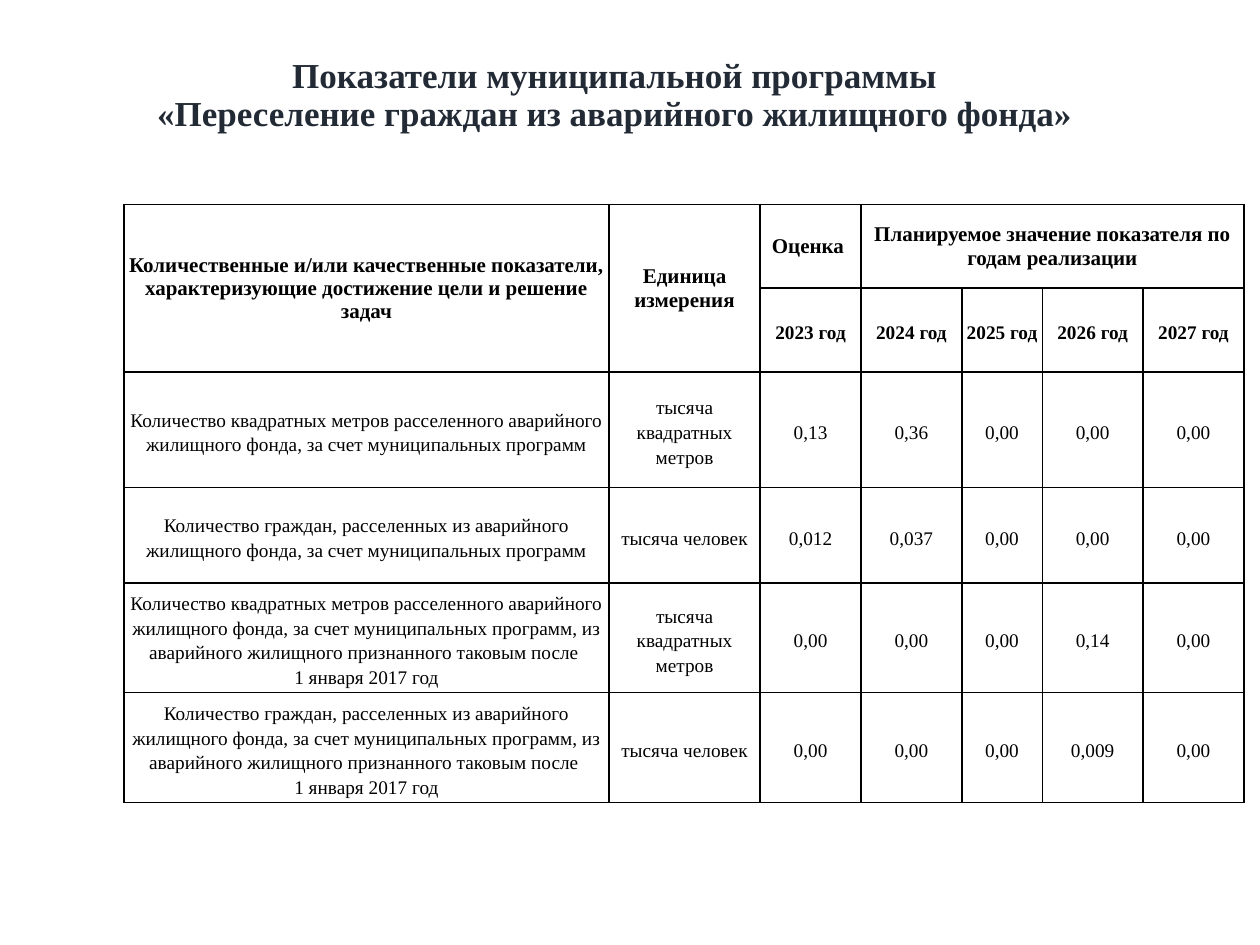
import pptx
import pptx.util
import pptx.dml.color
import pptx.enum.text
import pptx.oxml
import pptx.oxml.ns
from lxml import etree

Pt = pptx.util.Pt
COLORS = {"title": "222A35", "text": "000000", "border": "000000", "cell": "FFFFFF"}
FONT = "Times New Roman"

COLUMN_WIDTHS = [277.2, 86.4, 57.6, 57.6, 46, 57.6, 57.6]
ROW_HEIGHTS = [47.7, 48, 66.2, 54.5, 61, 61]
YEARS = [f"{year} год" for year in range(2023, 2028)]
AREA = "Количество квадратных метров расселенного аварийного жилищного фонда, за счет муниципальных программ"
PEOPLE = "Количество граждан, расселенных из аварийного жилищного фонда, за счет муниципальных программ"
AFTER_2017 = ", из аварийного жилищного признанного таковым после \n1 января 2017 год"
AREA_UNIT = "тысяча квадратных метров"
PEOPLE_UNIT = "тысяча человек"
INDICATORS = [
    [AREA, AREA_UNIT, "0,13", "0,36", "0,00", "0,00", "0,00"],
    [PEOPLE, PEOPLE_UNIT, "0,012", "0,037", "0,00", "0,00", "0,00"],
    [AREA + AFTER_2017, AREA_UNIT, "0,00", "0,00", "0,00", "0,14", "0,00"],
    [PEOPLE + AFTER_2017, PEOPLE_UNIT, "0,00", "0,00", "0,00", "0,009", "0,00"],
]
HEADERS = [
    (0, 0, 1, 0, "Количественные и/или качественные показатели, характеризующие достижение цели и решение задач"),
    (0, 1, 1, 1, "Единица измерения"),
    (0, 2, 0, 2, "Оценка "),
    (0, 3, 0, 6, "Планируемое значение показателя по годам реализации"),
]


def write_text(text_frame, text, size, color, bold=False, line_spacing=1.0):
    """Write one centred paragraph, turning newlines into line breaks."""
    paragraph = text_frame.paragraphs[0]
    paragraph.alignment = pptx.enum.text.PP_ALIGN.CENTER
    paragraph.line_spacing = line_spacing
    for index, line in enumerate(text.split("\n")):
        if index:
            paragraph.add_line_break()
        run = paragraph.add_run()
        run.text = line
        run.font.name = FONT
        run.font.size = Pt(size)
        run.font.bold = bold
        run.font.color.rgb = pptx.dml.color.RGBColor.from_string(COLORS[color])


def set_borders(cell):
    """Draw a thin line on all four sides of a cell."""
    properties = cell._tc.get_or_add_tcPr()
    for position, side in enumerate(("lnL", "lnR", "lnT", "lnB")):
        line = etree.Element(pptx.oxml.ns.qn(f"a:{side}"), w=str(Pt(1)))
        fill = etree.SubElement(line, pptx.oxml.ns.qn("a:solidFill"))
        etree.SubElement(fill, pptx.oxml.ns.qn("a:srgbClr"), val=COLORS["border"])
        properties.insert(position, line)


def fill_cell(cell, text, size, bold, line_spacing, margin):
    """Write the text of a cell and set its margins."""
    cell.margin_left = cell.margin_right = cell.margin_top = Pt(margin)
    cell.margin_bottom = Pt(0)
    cell.vertical_anchor = pptx.enum.text.MSO_ANCHOR.MIDDLE
    write_text(cell.text_frame, text, size, "text", bold, line_spacing)


def add_title(slide, left, top, width, height):
    """Add the two-line slide title."""
    shape = slide.shapes.add_textbox(Pt(left), Pt(top), Pt(width), Pt(height))
    text_frame = shape.text_frame
    text_frame.word_wrap = True
    text_frame.vertical_anchor = pptx.enum.text.MSO_ANCHOR.MIDDLE
    title = "Показатели муниципальной программы\n«Переселение граждан из аварийного жилищного фонда»"
    write_text(text_frame, title, 20, "title", True, 0.9)


def add_indicator_table(slide, left, top):
    """Add the table of programme indicators by year."""
    frame = slide.shapes.add_table(
        len(ROW_HEIGHTS), len(COLUMN_WIDTHS), Pt(left), Pt(top),
        Pt(sum(COLUMN_WIDTHS)), Pt(sum(ROW_HEIGHTS)))
    table = frame.table
    for column, width in zip(table.columns, COLUMN_WIDTHS):
        column.width = Pt(width)
    for row, height in zip(table.rows, ROW_HEIGHTS):
        row.height = Pt(height)
    for cell in table.iter_cells():
        cell.fill.solid()
        cell.fill.fore_color.rgb = pptx.dml.color.RGBColor.from_string(COLORS["cell"])
        set_borders(cell)

    for first_row, first_column, last_row, last_column, text in HEADERS:
        cell = table.cell(first_row, first_column)
        if (first_row, first_column) != (last_row, last_column):
            cell.merge(table.cell(last_row, last_column))
        fill_cell(cell, text, 12, True, 1.0, 0.5)
    for column_index, year in enumerate(YEARS, 2):
        fill_cell(table.cell(1, column_index), year, 11, True, 1.15, 2)
    for row_index, indicator in enumerate(INDICATORS, 2):
        for column_index, text in enumerate(indicator):
            fill_cell(table.cell(row_index, column_index), text, 11, False, 1.15, 2)


def main():
    """Build and save the presentation."""
    presentation = pptx.Presentation()
    presentation.slide_width = Pt(720)
    presentation.slide_height = Pt(540)
    slide = presentation.slides.add_slide(presentation.slide_layouts[6])
    add_title(slide, 70.5, 21, 561.5, 67.5)
    add_indicator_table(slide, 70.8, 116.8)
    presentation.save("out.pptx")


if __name__ == "__main__":
    main()
